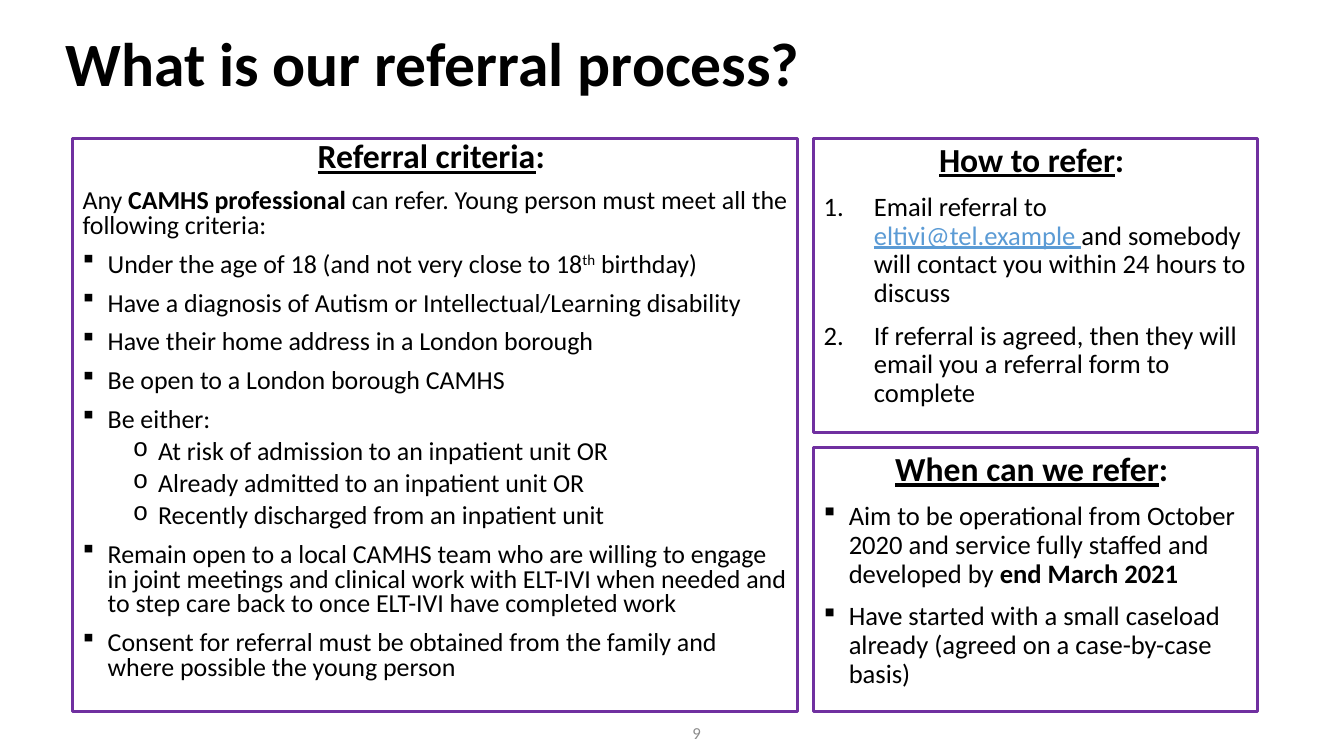
from lxml.etree import SubElement
from pptx import Presentation
from pptx.dml.color import RGBColor
from pptx.enum.shapes import MSO_SHAPE as Shape
from pptx.enum.text import MSO_ANCHOR as Anchor, PP_ALIGN as Align
from pptx.oxml.ns import qn
from pptx.util import Inches, Pt

BLACK = RGBColor(0x00, 0x00, 0x00)
PURPLE = RGBColor(0x70, 0x30, 0xA0)
LINK_BLUE = RGBColor(0x5B, 0x9B, 0xD5)
GREY = RGBColor(0x8C, 0x8C, 0x8C)
FONT = "Calibri"

BOLD = {"bold": True}
LINK = {"color": LINK_BLUE, "underline": True}
SUPER = {"baseline": 30000}
SQUARE = {"bullet": "§", "bullet_font": "Wingdings", "indent": 0.25, "hang": 0.25}
CIRCLE = {"bullet": "o", "bullet_font": "Courier New", "indent": 0.75, "hang": 0.25,
          "before": 5, "level": 1}
NUMBER = {"numbered": True, "indent": 0.5, "hang": 0.5}

TOP, BOTTOM, GAP = 1.37, 7.06, 0.15
RIGHT_COLUMN, RIGHT_WIDTH = 8.07, 4.4
HOW_HEIGHT = 2.92
WHEN_TOP = TOP + HOW_HEIGHT + GAP

CRITERIA = [
    (["Any ", ("CAMHS professional ", BOLD),
      "can refer. Young person must meet all the following criteria:"], {}),
    (["Under the age of 18 (and not very close to 18", ("th", SUPER), " birthday)"], SQUARE),
    (["Have a diagnosis of Autism or Intellectual/Learning disability"], SQUARE),
    (["Have their home address in a London borough"], SQUARE),
    (["Be open to a London borough CAMHS"], SQUARE),
    (["Be either:"], SQUARE),
    (["At risk of admission to an inpatient unit OR"], CIRCLE),
    (["Already admitted to an inpatient unit OR"], CIRCLE),
    (["Recently discharged from an inpatient unit"], CIRCLE),
    (["Remain open to a local CAMHS team who are willing to engage in joint meetings "
      "and clinical work with ELT-IVI when needed and to step care back to once "
      "ELT-IVI have completed work"], SQUARE),
    (["Consent for referral must be obtained from the family and where possible "
      "the young person"], SQUARE),
]
HOW_TO_REFER = [
    (["Email referral to ", ("eltivi@tel.example ", LINK),
      "and somebody will contact you within 24 hours to discuss"], NUMBER),
    (["If referral is agreed, then they will email you a referral form to complete"], NUMBER),
]
WHEN_TO_REFER = [
    (["Aim to be operational from October 2020 and service fully staffed and developed by ",
      ("end March 2021", BOLD)], SQUARE),
    (["Have started with a small caseload already (agreed on a case-by-case basis)"], SQUARE),
]


def add_span(para, text, size, color=BLACK, bold=False, underline=False, baseline=0):
    """Add one formatted run to a paragraph."""
    span = para.add_run()
    span.text = text
    font = span.font
    font.name, font.size = FONT, Pt(size)
    font.bold, font.underline = bold, underline
    font.color.rgb = color
    if baseline:
        span._r.get_or_add_rPr().set("baseline", str(baseline))


def add_text(frame, spans, size, align=Align.LEFT, spacing=1.0, before=0, level=0, indent=0,
             hang=0, bullet=None, bullet_font=FONT, numbered=False, **span_format):
    """Write one paragraph, made of plain strings and (text, format) pairs."""
    first = frame.paragraphs[0]
    para = frame.add_paragraph() if first.runs else first
    para.alignment, para.level = align, level
    para.line_spacing, para.space_before = spacing, Pt(before)
    properties = para._p.get_or_add_pPr()
    properties.set("marL", str(Inches(indent)))
    properties.set("indent", str(Inches(-hang)))
    if bullet:
        SubElement(properties, qn("a:buFont")).set("typeface", bullet_font)
        SubElement(properties, qn("a:buChar")).set("char", bullet)
    elif numbered:
        SubElement(properties, qn("a:buAutoNum")).set("type", "arabicPeriod")
    else:
        SubElement(properties, qn("a:buNone"))
    for part in spans:
        text, extra = (part, {}) if isinstance(part, str) else part
        add_span(para, text, size, **{**span_format, **extra})


def add_label(page, box, text, **text_format):
    """Place a single line of free text, centred vertically in its box."""
    frame = page.shapes.add_textbox(*map(Inches, box)).text_frame
    frame.word_wrap = True
    frame.vertical_anchor = Anchor.MIDDLE
    add_text(frame, [text], **text_format)


def add_panel(page, box, heading, items, heading_size=24, size=19, spacing=0.9):
    """Draw an outlined panel with an underlined heading and its list."""
    panel = page.shapes.add_shape(Shape.RECTANGLE, *map(Inches, box))
    panel.shadow.inherit = False
    panel.fill.background()
    panel.line.color.rgb = PURPLE
    panel.line.width = Pt(2.25)
    frame = panel.text_frame
    frame.word_wrap = True
    frame.vertical_anchor = Anchor.TOP
    add_text(frame, [(heading, {"underline": True}), ": "], heading_size,
             align=Align.CENTER, spacing=spacing, before=10, bold=True)
    for spans, style in items:
        add_text(frame, spans, size, **{"spacing": spacing, "before": 10, **style})


def build_page(page):
    """Place the title, the three panels and the page number."""
    add_label(page, (0.55, 0.28, 11.5, 0.77), "What is our referral process?",
              size=44, spacing=0.9, bold=True)
    add_panel(page, (0.72, TOP, 7.19, BOTTOM - TOP), "Referral criteria", CRITERIA,
              heading_size=24.1, size=18.5, spacing=0.8)
    add_panel(page, (RIGHT_COLUMN, TOP, RIGHT_WIDTH, HOW_HEIGHT),
              "How to refer", HOW_TO_REFER)
    add_panel(page, (RIGHT_COLUMN, WHEN_TOP, RIGHT_WIDTH, BOTTOM - WHEN_TOP),
              "When can we refer", WHEN_TO_REFER)
    add_label(page, (6.62, 7.07, 0.43, 0.4), "9", size=12, color=GREY, align=Align.RIGHT)


def main():
    """Build the deck and save it."""
    deck = Presentation()
    deck.slide_width, deck.slide_height = Inches(13.33), Inches(7.5)
    build_page(deck.slides.add_slide(deck.slide_layouts[6]))
    deck.save("out.pptx")


if __name__ == "__main__":
    main()
